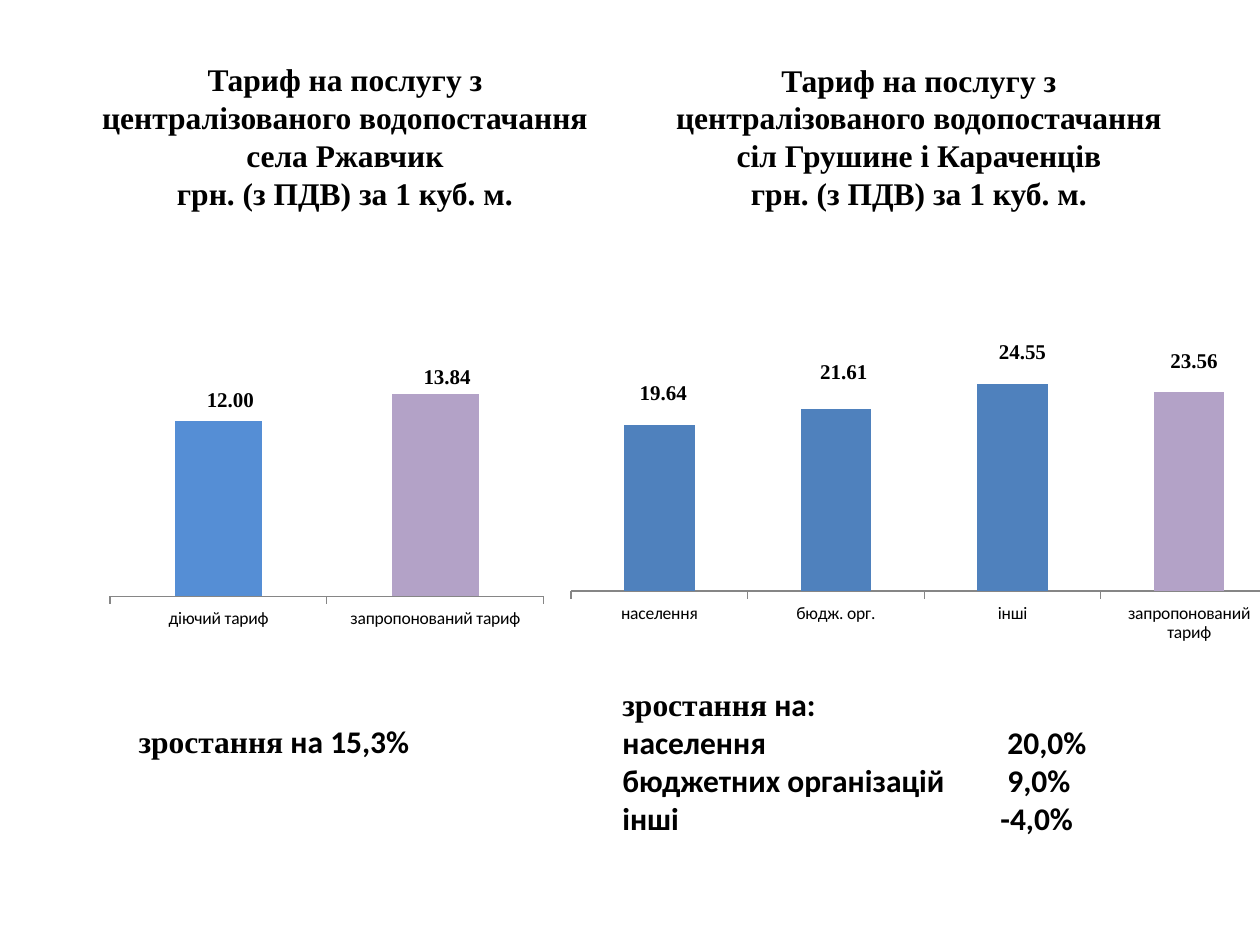
from lxml.etree import SubElement
from pptx import Presentation
from pptx.chart.data import CategoryChartData
from pptx.dml.color import RGBColor
from pptx.enum.chart import XL_CHART_TYPE, XL_TICK_MARK
from pptx.enum.text import MSO_ANCHOR, MSO_AUTO_SIZE, PP_ALIGN
from pptx.oxml import parse_xml
from pptx.oxml.ns import nsdecls, qn
from pptx.util import Emu, Pt

COLORS = {
    "text": "000000",
    "axis": "868686",
    "blue": "4F81BD",
    "light_blue": "558ED5",
    "purple": "B3A2C7",
}
SERIF = "Times New Roman"
SANS = "Calibri"
LINE_HEIGHT = 38
TAB_STOP = 378


def px(length):
    return Emu(round(length * 914400 / 126))


def color(name):
    return RGBColor.from_string(COLORS[name])


def style_font(font, size, name, bold=False):
    font.size = Pt(size)
    font.name = name
    font.bold = bold
    font.color.rgb = color("text")


def place(shape, box):
    shape.left, shape.top, shape.width, shape.height = map(px, box)


def prepare_frame(shape):
    frame = shape.text_frame
    frame.word_wrap = True
    frame.auto_size = MSO_AUTO_SIZE.NONE
    frame.vertical_anchor = MSO_ANCHOR.MIDDLE
    return frame


def format_heading(shape, box, text):
    place(shape, box)
    frame = prepare_frame(shape)
    frame.text = text
    for paragraph in frame.paragraphs:
        paragraph.alignment = PP_ALIGN.CENTER
        for run in paragraph.runs:
            style_font(run.font, 18, SERIF, True)
    return frame


def add_growth_note(slide, box, ending, rows=(), alignment=PP_ALIGN.LEFT):
    frame = prepare_frame(slide.shapes.add_textbox(*map(px, box)))
    first = frame.paragraphs[0]
    first.alignment = alignment
    for text, font_name in (("зростання", SERIF), (ending, SANS)):
        run = first.add_run()
        run.text = text
        style_font(run.font, 18, font_name, True)
    for row in rows:
        paragraph = frame.add_paragraph()
        paragraph.text = "\t".join(row)
        paragraph.alignment = alignment
        tabs = SubElement(paragraph._p.get_or_add_pPr(), qn("a:tabLst"))
        SubElement(tabs, qn("a:tab"), pos=str(px(TAB_STOP)), algn="l")
        for run in paragraph.runs:
            style_font(run.font, 18, SANS, True)


def manual_layout(x, y, size=None):
    parts = [("x", x), ("y", y)]
    if size:
        parts = [("layoutTarget", "inner"), ("xMode", "edge"), ("yMode", "edge"),
                 *parts, ("w", size[0]), ("h", size[1])]
    body = "".join(f'<c:{tag} val="{value}"/>' for tag, value in parts)
    return parse_xml(f'<c:layout {nsdecls("c")}><c:manualLayout>{body}'
                     '</c:manualLayout></c:layout>')


def add_tariff_chart(slide, box, bars, maximum, plot_box):
    data = CategoryChartData(number_format="#,##0.00")
    data.categories = [bar[0] for bar in bars]
    data.add_series("Тариф", [bar[1] for bar in bars])
    chart = slide.shapes.add_chart(
        XL_CHART_TYPE.COLUMN_STACKED, *map(px, box), data).chart
    chart.has_legend = False
    chart.has_title = False
    style_font(chart.font, 10, SANS)

    chart.value_axis.visible = False
    chart.value_axis.has_major_gridlines = False
    chart.value_axis.minimum_scale = 0
    chart.value_axis.maximum_scale = maximum
    chart.category_axis.major_tick_mark = XL_TICK_MARK.OUTSIDE
    chart.category_axis.format.line.color.rgb = color("axis")
    chart.category_axis.format.line.width = Pt(0.75)

    plot_area = chart._chartSpace.chart.plotArea
    for layout in plot_area.findall(qn("c:layout")):
        plot_area.remove(layout)
    plot_area.insert(0, manual_layout(*plot_box[:2], size=plot_box[2:]))

    plot = chart.plots[0]
    plot.gap_width = 150
    plot.overlap = 100
    plot.vary_by_categories = False
    series = plot.series[0]
    series.format.fill.solid()
    series.format.fill.fore_color.rgb = color("blue")
    labels = series.data_labels
    labels.show_value = True
    labels.number_format = "#,##0.00"
    labels.number_format_is_linked = False
    style_font(labels.font, 12, SERIF, True)
    for leader_lines in labels._element.findall(qn("c:showLeaderLines")):
        leader_lines.set("val", "0")

    for index, (_, _, fill, shift_x, shift_y) in enumerate(bars):
        point = series.points[index]
        point.format.fill.solid()
        point.format.fill.fore_color.rgb = color(fill)
        style_font(point.data_label.font, 12, SERIF, True)
        label = labels._element.findall(qn("c:dLbl"))[index]
        label.insert(1, manual_layout(shift_x / box[2], shift_y / box[3]))


def add_village_column(slide):
    format_heading(
        slide.shapes.add_textbox(0, 0, 0, 0), (86, 57, 518, 158),
        "Тариф на послугу з централізованого водопостачання села Ржавчик\n"
        "грн. (з ПДВ) за 1 куб. м.")
    add_growth_note(slide, (15, 662, 518, 158), " на 15,3%",
                    alignment=PP_ALIGN.CENTER)
    add_tariff_chart(
        slide, (35, 314, 525, 339),
        [("діючий тариф", 12, "light_blue", 12, -108),
         ("запропонований тариф", 13.84, "purple", 12, -118)],
        16, (0.143, 0.144, 0.826, 0.689))


def add_two_villages_column(slide):
    frame = format_heading(
        slide.shapes.title, (660, 76, 518, 158),
        "Тариф на послугу з централізованого водопостачання "
        "сіл Грушине і Караченців\vгрн. (з ПДВ) за 1 куб. м.")
    frame.margin_bottom = px(6 + LINE_HEIGHT)
    add_growth_note(
        slide, (610, 682, 518, 158), " на:",
        [("населення", " 20,0%"),
         ("бюджетних організацій", " 9,0%"),
         ("інші", "-4,0%")])
    add_tariff_chart(
        slide, (512, 275, 767, 438),
        [("населення", 19.64, "blue", 4, -115),
         ("бюдж. орг.", 21.61, "blue", 8, -128),
         ("інші", 24.55, "blue", 10, -135),
         ("запропонований тариф", 23.56, "purple", 5, -130)],
        30, (0.077, 0.144, 0.921, 0.578))


def main():
    presentation = Presentation()
    presentation.slide_width = px(1260)
    presentation.slide_height = px(945)
    slide = presentation.slides.add_slide(presentation.slide_layouts[5])
    add_village_column(slide)
    add_two_villages_column(slide)
    presentation.save("out.pptx")


if __name__ == "__main__":
    main()
